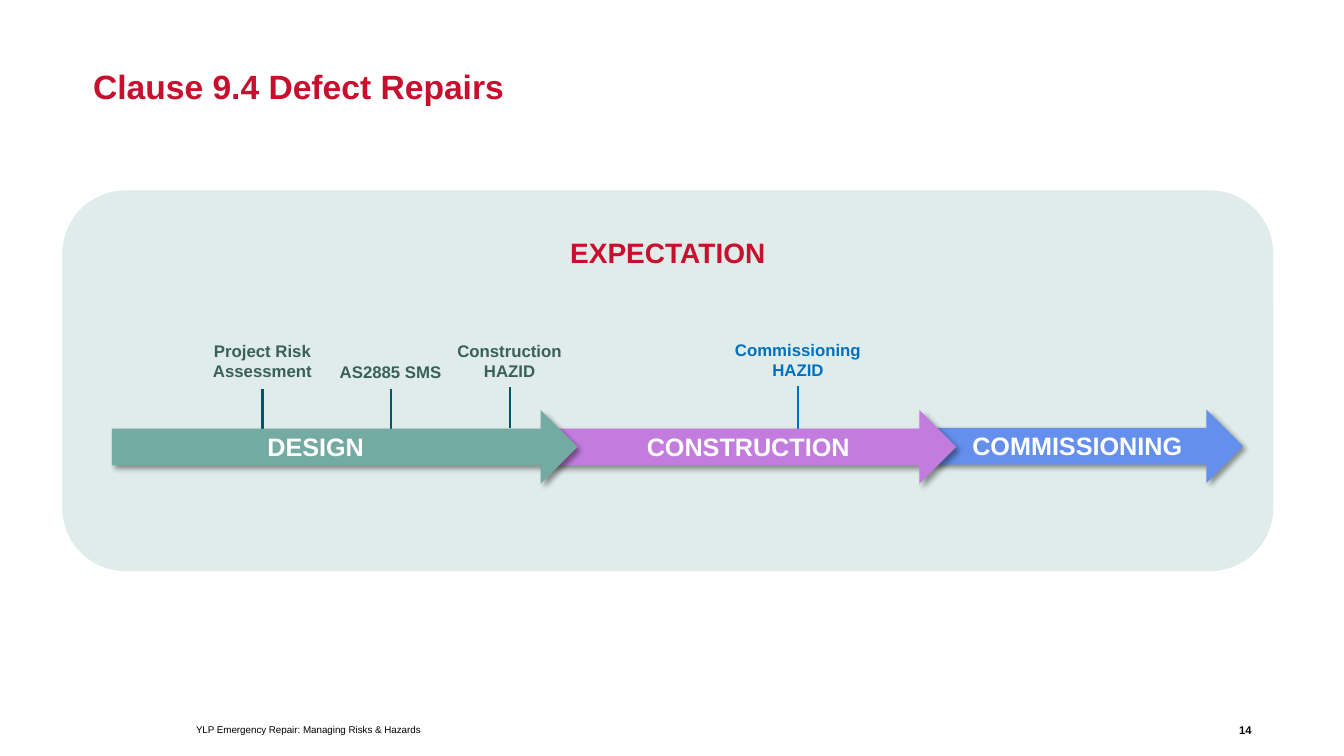
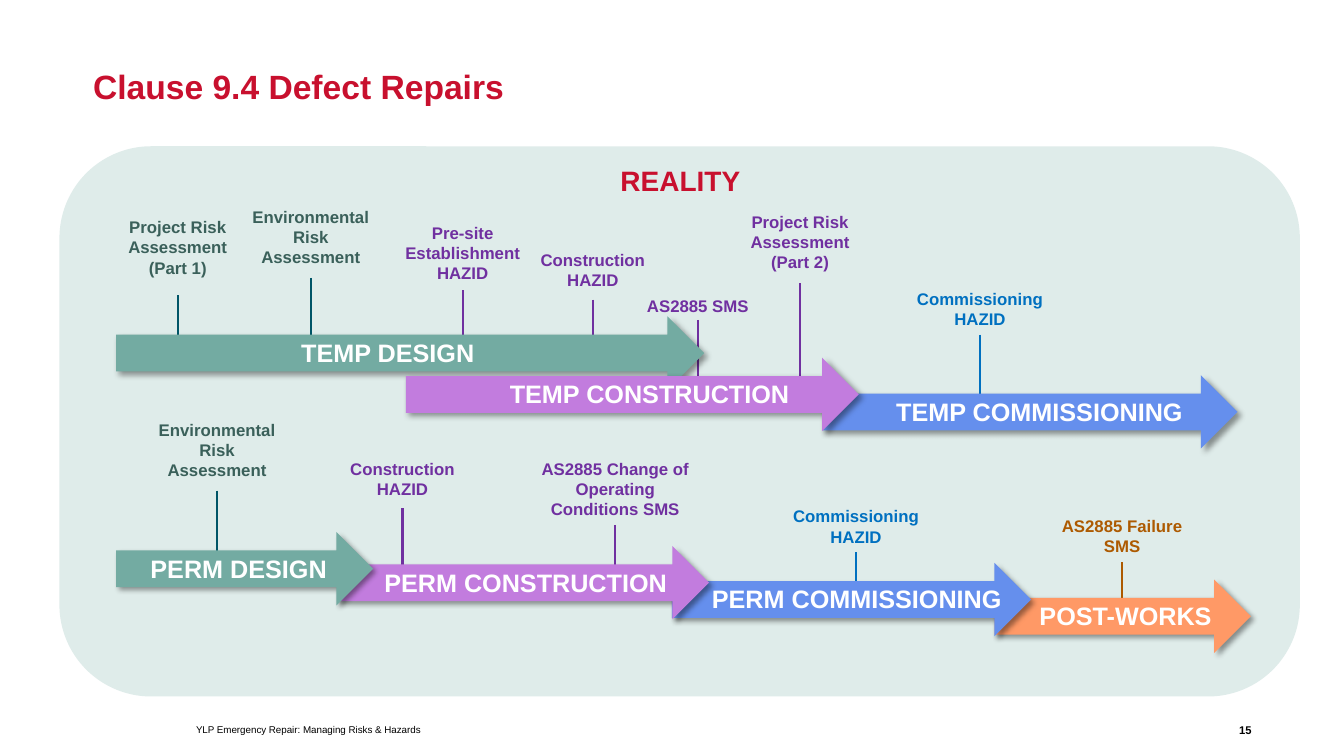
import pptx
import pptx.dml.color
import pptx.enum.shapes
import pptx.enum.text
import pptx.oxml
import pptx.oxml.ns
import pptx.util
from collections import namedtuple

Pt = pptx.util.Pt
SHAPES = pptx.enum.shapes.MSO_SHAPE
ALIGN = pptx.enum.text.PP_ALIGN
ANCHOR = pptx.enum.text.MSO_ANCHOR

FONT = "Arial"
RED = "C8102E"
BLACK = "000000"
WHITE = "FFFFFF"
PANEL = "DFECEA"

Phase = namedtuple("Phase", "arrow pin text")
DESIGN = Phase("73ABA2", "005567", "3A605A")
CONSTRUCTION = Phase("C27CDE", "7030A0", "7030A0")
COMMISSIONING = Phase("658FED", "0070C0", "0070C0")
POST_WORKS = Phase("FF9966", "AD5A01", "AD5A01")

ARROW_HEIGHT = 52.5
ARROW_LABEL_WIDTH = 225
ARROW_LABEL_DROP = 15
MILESTONE_WIDTH = 111
NARROW = 85

SHADOW = (
    '<a:outerShdw xmlns:a="http://schemas.openxmlformats.org/drawingml/2006/main" '
    'blurRad="50800" dist="38100" dir="2700000" algn="tl" rotWithShape="0">'
    '<a:srgbClr val="000000"><a:alpha val="40000"/></a:srgbClr></a:outerShdw>'
)


def colour(value):
    return pptx.dml.color.RGBColor.from_string(value)


def add_text(page, text, frame, size, ink, bold=True,
             align=ALIGN.CENTER, anchor=ANCHOR.TOP, spacing=None):
    box = page.shapes.add_textbox(*map(Pt, frame))
    content = box.text_frame
    content.word_wrap = True
    content.vertical_anchor = anchor
    content.margin_left = content.margin_right = 0
    content.margin_top = content.margin_bottom = 0
    content.text = text
    for para in content.paragraphs:
        para.alignment = align
        para.line_spacing = spacing
        para.font.name = FONT
        para.font.size = Pt(size)
        para.font.bold = bold
        para.font.color.rgb = colour(ink)
    return box


def add_filled(page, kind, frame, fill):
    shape = page.shapes.add_shape(kind, *map(Pt, frame))
    shape.shadow.inherit = False
    shape.fill.solid()
    shape.fill.fore_color.rgb = colour(fill)
    shape.line.fill.background()
    return shape


def add_milestone(page, text, phase, centre, top, bottom, foot, width=MILESTONE_WIDTH):
    frame = (centre - width / 2, top, width, bottom - top)
    label = add_text(page, text, frame, 12, phase.text)
    pin = page.shapes.add_connector(
        pptx.enum.shapes.MSO_CONNECTOR.STRAIGHT,
        Pt(centre), Pt(bottom), Pt(centre), Pt(foot))
    pin.begin_connect(label, 2)
    pin.line.color.rgb = colour(phase.pin)
    pin.line.width = Pt(1.5)
    properties = pin._element.spPr
    properties.append(properties.makeelement(pptx.oxml.ns.qn("a:effectLst"), {}))


def add_phase(page, text, phase, left, top, width, centre):
    arrow = add_filled(page, SHAPES.RIGHT_ARROW, (left, top, width, ARROW_HEIGHT), phase.arrow)
    effects = arrow._element.spPr.find(pptx.oxml.ns.qn("a:effectLst"))
    effects.append(pptx.oxml.parse_xml(SHADOW))
    frame = (centre - ARROW_LABEL_WIDTH / 2, top + ARROW_LABEL_DROP, ARROW_LABEL_WIDTH, 22.5)
    add_text(page, text, frame, 18, WHITE)


def add_timeline(deck, number, panel, heading, heading_at, milestones, phases):
    page = deck.slides.add_slide(deck.slide_layouts[6])
    add_filled(page, SHAPES.ROUNDED_RECTANGLE, panel, PANEL)
    add_text(page, "Clause 9.4 Defect Repairs", (66.5, 50.5, 828, 58.5), 24, RED,
             align=ALIGN.LEFT, spacing=0.9)
    add_text(page, "YLP Emergency Repair: Managing Risks & Hazards",
             (140, 513.5, 708, 16), 7, BLACK, False, ALIGN.LEFT, ANCHOR.MIDDLE)
    add_text(page, str(number), (848, 513.5, 46, 16), 8, BLACK,
             align=ALIGN.RIGHT, anchor=ANCHOR.MIDDLE)
    add_text(page, heading, (*heading_at, 230, 45), 20, RED)
    for milestone in milestones:
        add_milestone(page, *milestone)
    for phase in phases:
        add_phase(page, *phase)


def main():
    deck = pptx.Presentation()
    deck.slide_width = Pt(960)
    deck.slide_height = Pt(540)

    add_timeline(
        deck, 14, (44.5, 136, 865, 272), "EXPECTATION", (362, 168),
        [
            ("Project Risk Assessment", DESIGN, 187.5, 243.5, 278, 307.5),
            ("AS2885 SMS", DESIGN, 279, 258.5, 278, 311),
            ("Construction HAZID", DESIGN, 364, 243.5, 276.5, 306),
            ("Commissioning HAZID", COMMISSIONING, 570, 242.5, 276, 313),
        ],
        [
            ("COMMISSIONING", COMMISSIONING, 662.5, 292.5, 225.5, 769.5),
            ("CONSTRUCTION", CONSTRUCTION, 386.5, 293, 296.5, 534.5),
            ("DESIGN", DESIGN, 80, 293, 332.5, 225.5),
        ])

    add_timeline(
        deck, 15, (42.5, 104.5, 886, 393), "REALITY", (371, 116.5),
        [
            ("Project Risk Assessment\n(Part 1)", DESIGN, 127, 155, 211, 240.5),
            ("Environmental Risk Assessment", DESIGN, 222, 147.5, 198.5, 242.5, NARROW),
            ("Pre-site Establishment HAZID", CONSTRUCTION, 330.5, 159, 207.5, 251.5),
            ("Construction HAZID", CONSTRUCTION, 423.5, 178.5, 214, 255),
            ("AS2885 SMS", CONSTRUCTION, 498.5, 211, 228.5, 269.5),
            ("Project Risk Assessment\n(Part 2)", CONSTRUCTION, 571.5, 151, 202.5, 270),
            ("Commissioning HAZID", COMMISSIONING, 700, 206, 239, 281.5),
            ("Environmental Risk Assessment", DESIGN, 155, 299.5, 350.5, 395.5, NARROW),
            ("Construction HAZID", CONSTRUCTION, 287.5, 327.5, 363, 404),
            ("AS2885 Change of Operating Conditions SMS", CONSTRUCTION, 439.5, 327.5, 375, 404),
            ("Commissioning HAZID", COMMISSIONING, 611.5, 361.5, 394.5, 420),
            ("AS2885 Failure SMS", POST_WORKS, 801.5, 368.5, 401.5, 427),
        ],
        [
            ("TEMP COMMISSIONING", COMMISSIONING, 587.5, 268, 296.5, 742.5),
            ("TEMP DESIGN", DESIGN, 83, 226, 420, 277),
            ("TEMP CONSTRUCTION", CONSTRUCTION, 290, 255.5, 323.5, 464),
            ("POST-WORKS", POST_WORKS, 710.5, 414, 183, 804),
            ("PERM COMMISSIONING", COMMISSIONING, 480, 402, 256.5, 612),
            ("PERM CONSTRUCTION", CONSTRUCTION, 241, 390, 265.5, 375.5),
            ("PERM DESIGN", DESIGN, 83, 380, 183.5, 170.5),
        ])

    deck.save("out.pptx")


if __name__ == "__main__":
    main()
